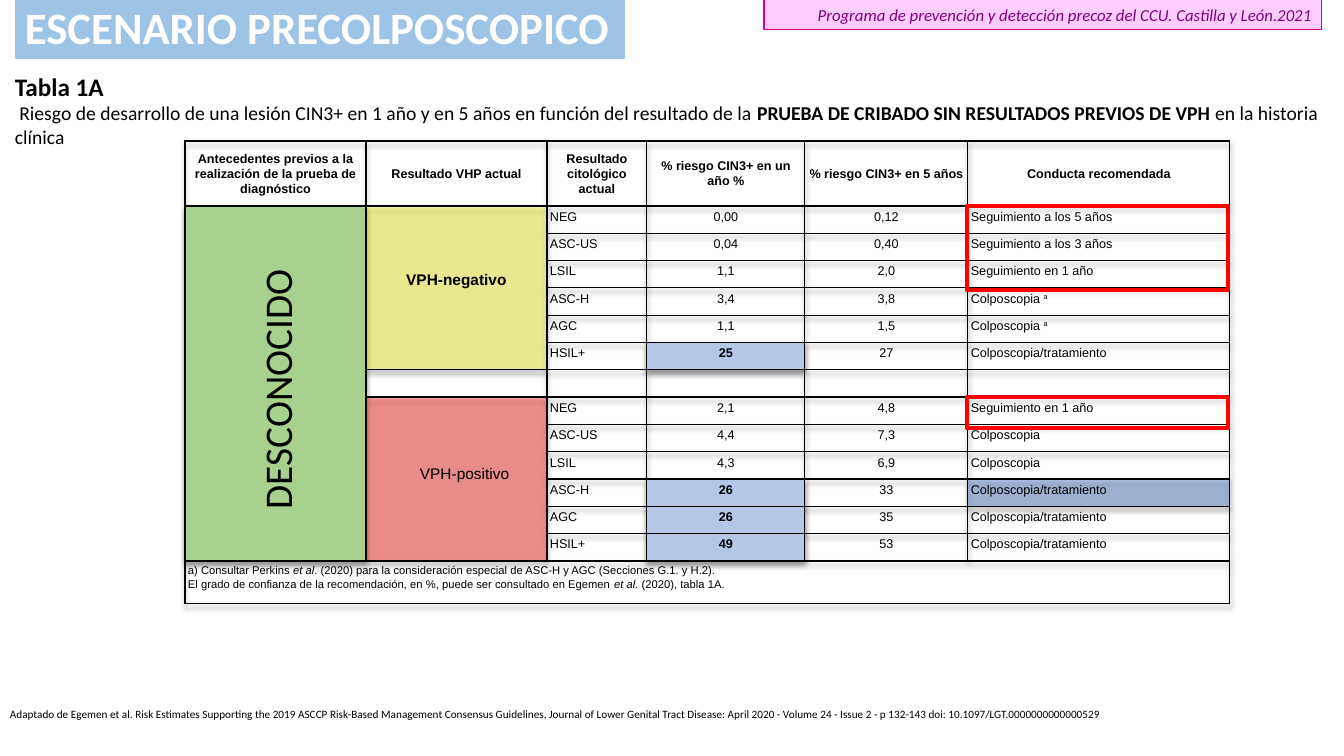
from lxml import etree
from pptx import Presentation
from pptx import util as u
from pptx.dml.color import RGBColor
from pptx.enum import shapes, text
from pptx.oxml import ns

# Content
TITLE = "ESCENARIO PRECOLPOSCOPICO"
PROGRAMME = "Programa de prevención y detección precoz del CCU. Castilla y León.2021"
CAPTION = [
    [("Tabla 1A", {"size": 18, "bold": True})],
    [(" Riesgo de desarrollo de una lesión CIN3+ en 1 año y en 5 años en función del resultado de la ", {}),
     ("PRUEBA DE CRIBADO SIN RESULTADOS PREVIOS DE VPH ", {"bold": True}),
     ("en la historia clínica", {})],
]
SOURCE = ("Adaptado de Egemen et al. Risk Estimates Supporting the 2019 ASCCP Risk-Based Management "
          "Consensus Guidelines, Journal of Lower Genital Tract Disease: April 2020 - Volume 24 - "
          "Issue 2 - p 132-143 doi: 10.1097/LGT.0000000000000529")
HISTORY = "DESCONOCIDO"
HEADERS = ["Antecedentes previos a la realización de la prueba de diagnóstico", "Resultado VHP actual",
           "Resultado citológico actual", "% riesgo CIN3+ en un año %", "% riesgo CIN3+ en 5 años",
           "Conducta recomendada"]
TREAT = "Colposcopia/tratamiento"
NEGATIVE = [
    ("NEG", "0,00", "0,12", "Seguimiento a los 5 años"),
    ("ASC-US", "0,04", "0,40", "Seguimiento a los 3 años"),
    ("LSIL", "1,1", "2,0", "Seguimiento en 1 año"),
    ("ASC-H", "3,4", "3,8", "Colposcopia ª"),
    ("AGC", "1,1", "1,5", "Colposcopia ª"),
    ("HSIL+", "25", "27", TREAT),
]
POSITIVE = [
    ("NEG", "2,1", "4,8", "Seguimiento en 1 año"),
    ("ASC-US", "4,4", "7,3", "Colposcopia"),
    ("LSIL", "4,3", "6,9", "Colposcopia"),
    ("ASC-H", "26", "33", TREAT),
    ("AGC", "26", "35", TREAT),
    ("HSIL+", "49", "53", TREAT),
]
RESULTS = NEGATIVE + [("", "", "", "")] + POSITIVE
HIGH_RISK = 25
NOTES = [
    [("a) Consultar Perkins ", {}), ("et al", {"italic": True}),
     (". (2020) para la consideración especial de ASC-H y AGC (Secciones G.1. y H.2).", {})],
    [("El grado de confianza de la recomendación, en %, puede ser consultado en Egemen ", {}),
     ("et al.", {"italic": True}), (" (2020), tabla 1A.", {})],
]

# Theme: colours (with opacity in % where given) and type sizes
THEME = {
    "title": "9DC3E6", "white": "FFFFFF", "black": "000000", "pink": "FFCCFF", "magenta": "D60093",
    "purple": "800080", "red": "FF0000", "history": ("A9D18E", 100), "negative": ("FFFF00", 34),
    "positive": ("FF0000", 36), "risk": ("B4C7E7", 100), "treatment": ("4472C4", 39),
    "title_size": 32, "programme_size": 12, "caption_size": 14, "history_size": 28,
    "source_size": 8, "cell_size": 9, "group_size": 11, "note_size": 8,
    "body": "Calibri", "table": "Arial",
}

# Layout in px
SLIDE_W, SLIDE_H = 1344, 756
PX = 12192000 / SLIDE_W
TABLE_X, TABLE_Y = 185, 141
COLUMNS = [181, 181, 100, 158, 163, 262]
HEADER_H, RESULTS_H, NOTES_H = 65, 355, 43
ROW_H = RESULTS_H / len(RESULTS)
CELL_INSET = 3
CENTER, RIGHT = text.PP_ALIGN.CENTER, text.PP_ALIGN.RIGHT
MIDDLE = text.MSO_ANCHOR.MIDDLE


def px(length):
    return u.Emu(round(length * PX))


def rgb(name):
    return RGBColor.from_string(THEME[name])


def write(frame, paragraphs, size, font="body", color="black", align=None, spacing=None, **style):
    """Fill a text frame with paragraphs, each a list of (words, format) runs."""
    for index, runs in enumerate(paragraphs):
        paragraph = frame.add_paragraph() if index else frame.paragraphs[0]
        for name, value in {"alignment": align, "line_spacing": spacing}.items():
            setattr(paragraph, name, value)
        for words, changes in runs:
            run = paragraph.add_run()
            run.text = words.replace("ª", "a") if words == "ª" else words
            look = {"name": THEME[font], "size": THEME[size], "bold": False, "italic": False, **style, **changes}
            look["size"] = u.Pt(look["size"])
            for name, value in look.items():
                setattr(run.font, name, value)
            run.font.color.rgb = rgb(color)
            if words == "ª":
                run.font._element.set("baseline", "30000")


def add_rect(slide, box, fill=None, line=None, weight=0.75):
    rect = slide.shapes.add_shape(shapes.MSO_SHAPE.RECTANGLE, *map(px, box))
    rect.shadow.inherit = False
    if fill:
        rect.fill.solid()
        rect.fill.fore_color.rgb = rgb(fill)
    else:
        rect.fill.background()
    if line:
        rect.line.color.rgb = rgb(line)
        rect.line.width = u.Pt(weight)
    else:
        rect.line.fill.background()
    return rect


def add_text(slide, box, paragraphs, size, wrap=True, **style):
    label = slide.shapes.add_textbox(*map(px, box))
    label.text_frame.word_wrap = wrap
    write(label.text_frame, paragraphs, size, **style)
    return label


def fill_cell(cell, paragraphs, size="cell_size", fill=None, top=CELL_INSET, left=CELL_INSET, anchor=None, **style):
    insets = {"margin_top": px(top), "margin_left": px(left), "margin_right": px(CELL_INSET),
              "margin_bottom": px(CELL_INSET), "vertical_anchor": anchor}
    for name, value in insets.items():
        setattr(cell, name, value)
    if fill:
        color, opacity = THEME[fill]
        cell.fill.solid()
        cell.fill.fore_color.rgb = RGBColor.from_string(color)
        if opacity < 100:
            tint = cell._tc.tcPr.find(".//" + ns.qn("a:solidFill") + "/" + ns.qn("a:srgbClr"))
            # The border colours come first, so pick the cell's own fill
            tint = cell._tc.tcPr.find(ns.qn("a:solidFill"))[0]
            etree.SubElement(tint, ns.qn("a:alpha"), val=str(opacity * 1000))
    write(cell.text_frame, paragraphs, size, font="table", spacing=1.07, **style)


def prepare_cell(cell):
    """Black border, no fill, and a small line height while empty."""
    cell_format = cell._tc.get_or_add_tcPr()
    for side in ("lnL", "lnR", "lnT", "lnB"):
        border = etree.SubElement(cell_format, ns.qn("a:" + side), w=str(u.Pt(1)))
        stroke = etree.SubElement(border, ns.qn("a:solidFill"))
        etree.SubElement(stroke, ns.qn("a:srgbClr"), val=THEME["black"])
    cell.fill.background()
    etree.SubElement(cell.text_frame.paragraphs[0]._p, ns.qn("a:endParaRPr"), sz=str(THEME["cell_size"] * 100))


def add_risk_table(slide):
    heights = [HEADER_H] + [ROW_H] * len(RESULTS) + [NOTES_H]
    box = (TABLE_X, TABLE_Y, sum(COLUMNS), sum(heights))
    table = slide.shapes.add_table(len(heights), len(COLUMNS), *map(px, box)).table
    table.first_row = table.horz_banding = False
    for column, width in zip(table.columns, COLUMNS):
        column.width = px(width)
    for row, height in zip(table.rows, heights):
        row.height = px(height)
    for cell in table.iter_cells():
        prepare_cell(cell)

    # Soft shadow under the table
    effects = etree.Element(ns.qn("a:effectLst"))
    shadow = etree.SubElement(effects, ns.qn("a:outerShdw"), blurRad="50800", dist="38100", dir="5400000")
    shade = etree.SubElement(shadow, ns.qn("a:srgbClr"), val=THEME["black"])
    etree.SubElement(shade, ns.qn("a:alpha"), val="40000")
    table._tbl.tblPr.insert(0, effects)

    # Merged blocks
    last = len(heights) - 1
    positive = len(NEGATIVE) + 2
    table.cell(1, 0).merge(table.cell(last - 1, 0))
    table.cell(1, 1).merge(table.cell(len(NEGATIVE), 1))
    table.cell(positive, 1).merge(table.cell(last - 1, 1))
    table.cell(last, 0).merge(table.cell(last, len(COLUMNS) - 1))
    fill_cell(table.cell(1, 0), [], fill="history")
    fill_cell(table.cell(1, 1), [[("VPH-negativo", {"bold": True})]], "group_size", "negative", top=64, align=CENTER)
    fill_cell(table.cell(positive, 1), [[("VPH-positivo", {})]], "group_size", "positive", top=67, left=54)
    fill_cell(table.cell(last, 0), NOTES, "note_size")

    # Headers and results
    for column, header in enumerate(HEADERS):
        fill_cell(table.cell(0, column), [[(header, {})]], anchor=MIDDLE, align=CENTER, bold=True)
    for row, result in enumerate(RESULTS, 1):
        for column, words in enumerate(result, 2):
            high = column == 3 and words.isdigit() and int(words) >= HIGH_RISK
            treated = column == 5 and result[:2] == ("ASC-H", "26")
            fill = "risk" if high else "treatment" if treated else None
            runs = [(words.rstrip("ª"), {})] + ([("ª", {})] if words.endswith("ª") else [])
            fill_cell(table.cell(row, column), [runs] if words else [], fill=fill, bold=high,
                      align=CENTER if column in (3, 4) else None)


def main():
    deck = Presentation()
    deck.slide_width, deck.slide_height = px(SLIDE_W), px(SLIDE_H)
    slide = deck.slides.add_slide(deck.slide_layouts[6])

    # Title and programme bands
    title = add_rect(slide, (15, 0, 610, 59), "title")
    title.text_frame.vertical_anchor = MIDDLE
    write(title.text_frame, [[(TITLE, {})]], "title_size", color="white", bold=True,
          align=text.PP_ALIGN.LEFT, spacing=0.9)
    programme = add_rect(slide, (764, 0, 558, 30), "pink", "magenta")
    programme.text_frame.vertical_anchor = text.MSO_ANCHOR.TOP
    write(programme.text_frame, [[(PROGRAMME, {})]], "programme_size", color="purple", italic=True, align=RIGHT)

    # Table, its labels and the source line
    add_risk_table(slide)
    history = add_text(slide, (123, 361, 307, 57), [[(HISTORY, {})]], "history_size", align=CENTER)
    history.rotation = 270
    add_text(slide, (0, 702, 1120, 54), [[(SOURCE, {})]], "source_size", wrap=False)
    add_text(slide, (5, 66, 1340, 126), CAPTION, "caption_size")

    # Red frames around the follow-up advice
    for top, height in ((206, 84), (397, 31)):
        add_rect(slide, (967, top, 261, height), line="red", weight=3)
    deck.save("out.pptx")


if __name__ == "__main__":
    main()
